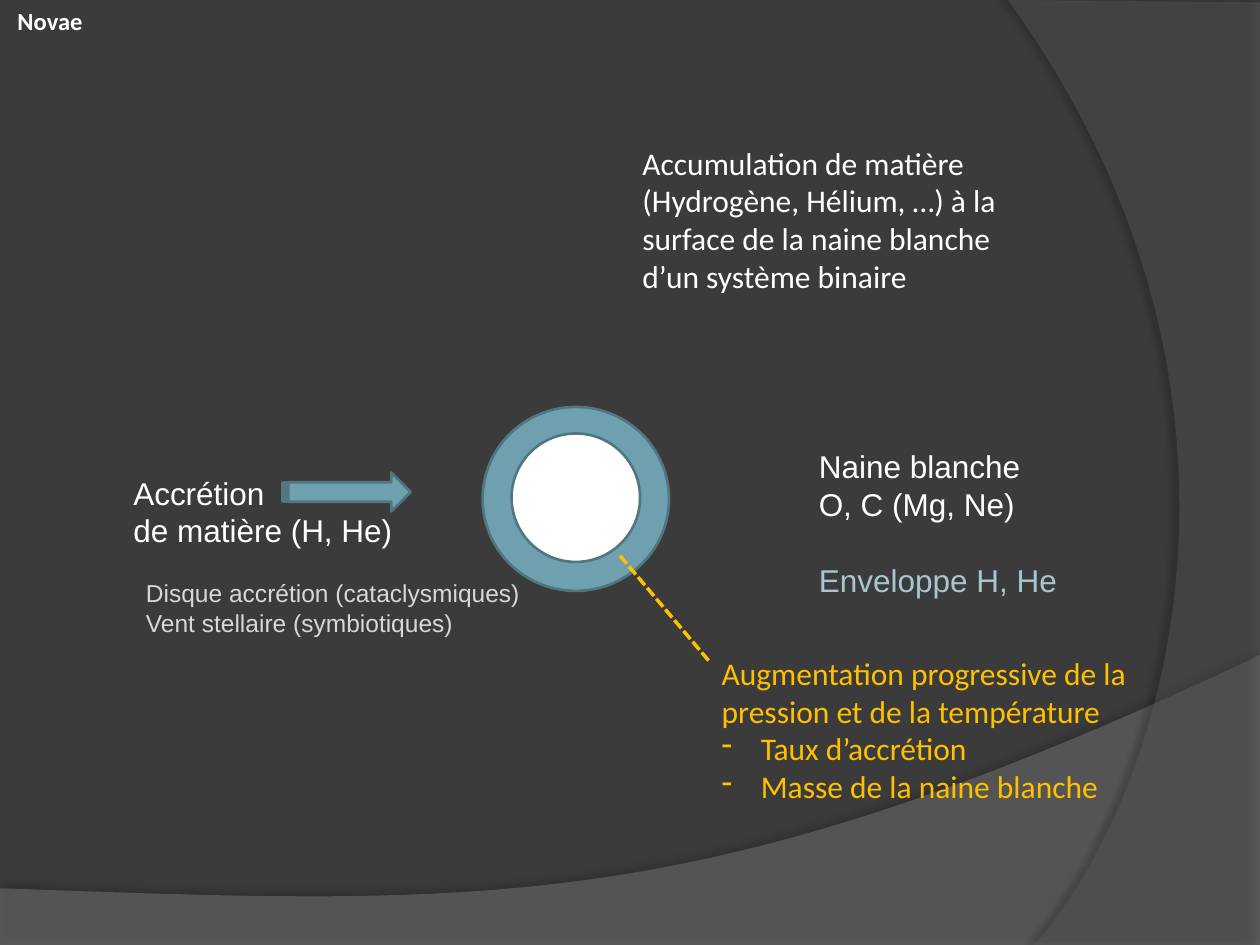
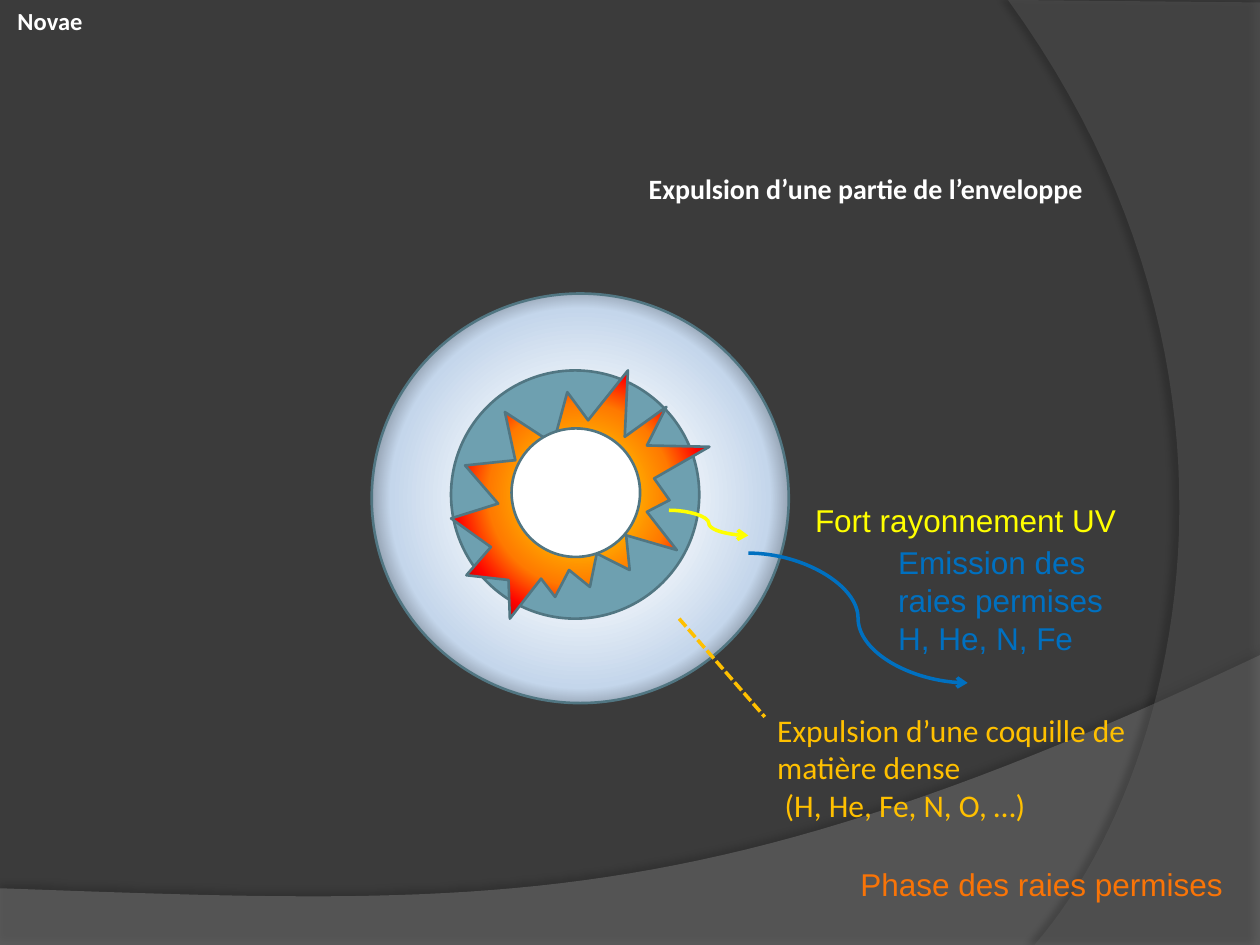
"""Build two slides that explain how novae erupt."""
import dataclasses

import pptx
import pptx.dml.color
import pptx.enum.dml
import pptx.enum.shapes
import pptx.enum.text
import pptx.oxml
import pptx.oxml.ns
import pptx.util

Inches = pptx.util.Inches
SHAPES = pptx.enum.shapes.MSO_SHAPE
CONNECTORS = pptx.enum.shapes.MSO_CONNECTOR


@dataclasses.dataclass(frozen=True)
class Theme:
    """Colours, fonts and sizes shared by the slides."""

    background: str = "3B3B3B"
    lower_band: str = "7F7F7F"
    side_band: str = "5E5E5E"
    shadow: str = "000000"
    white: str = "FFFFFF"
    muted: str = "D8D8D8"
    envelope: str = "6EA0B0"
    envelope_text: str = "A8C6D0"
    outline: str = "517682"
    amber: str = "FFC000"
    yellow: str = "FFFF00"
    blue: str = "0070C0"
    orange: str = "F97407"
    shell: tuple = ((3, "FFFFFF"), (23, "FFFFFF"), (65, "C4D6EB"), (92, "000000"), (100, "4C7C8B"))
    fire: tuple = ((0, "FFF200"), (51, "FF7A00"), (70, "FF0300"), (100, "4D0808"))
    sans: str = "Arial"
    humanist: str = "Calibri"
    body: int = 18
    heading: int = 16
    small: int = 14
    outline_width: float = 1.5
    pointer_width: float = 2


THEME = Theme()


def rgb(code):
    """Turn a hex code into a colour."""
    return pptx.dml.color.RGBColor.from_string(code)


def append_xml(parent, tag, inner="", **attributes):
    """Append one DrawingML element to a parent."""
    listed = "".join(f' {name}="{value}"' for name, value in attributes.items())
    namespace = pptx.oxml.ns.nsdecls("a")
    element = pptx.oxml.parse_xml(f"<a:{tag} {namespace}{listed}>{inner}</a:{tag}>")
    parent.append(element)
    return element


def colour_xml(code, opacity):
    """Describe a colour with an opacity in percent."""
    return f'<a:srgbClr val="{code}"><a:alpha val="{opacity * 1000}"/></a:srgbClr>'


def bezier(start, first, second, end, steps=48):
    """Sample a cubic curve, leaving out its start."""
    points = []
    for step in range(1, steps + 1):
        t = step / steps
        weights = ((1 - t) ** 3, 3 * t * (1 - t) ** 2, 3 * t * t * (1 - t), t ** 3)
        corners = (start, first, second, end)
        points.append(tuple(sum(w * c[axis] for w, c in zip(weights, corners)) for axis in (0, 1)))
    return points


def add_band(page, points, colour, opacity, shadow_opacity, distance, direction):
    """Draw a translucent background band with a soft shadow."""
    scaled = [(Inches(x), Inches(y)) for x, y in points]
    builder = page.shapes.build_freeform(*scaled[0], scale=1.0)
    builder.add_line_segments(scaled[1:], close=True)
    band = builder.convert_to_shape()
    band.fill.solid()
    band.fill.fore_color.rgb = rgb(colour)
    shade = band.fill._xPr.find(".//" + pptx.oxml.ns.qn("a:srgbClr"))
    append_xml(shade, "alpha", val=opacity * 1000)
    band.line.fill.background()
    band.shadow.inherit = False
    effects = band._element.spPr.find(pptx.oxml.ns.qn("a:effectLst"))
    append_xml(effects, "outerShdw", colour_xml(THEME.shadow, shadow_opacity),
               blurRad=pptx.util.Pt(4), dist=pptx.util.Pt(distance),
               dir=direction * 60000, algn="ctr", rotWithShape=0)


def fill_radially(shape, stops):
    """Fill a shape with a gradient spreading from its centre."""
    shape.fill.gradient()
    gradient = shape._element.spPr.find(pptx.oxml.ns.qn("a:gradFill"))
    for child in list(gradient):
        gradient.remove(child)
    stop_list = append_xml(gradient, "gsLst")
    for position, code in stops:
        append_xml(stop_list, "gs", f'<a:srgbClr val="{code}"/>', pos=position * 1000)
    centre = '<a:fillToRect l="50000" t="50000" r="50000" b="50000"/>'
    append_xml(gradient, "path", centre, path="circle")


def add_body(page, kind, bounds, fill):
    """Draw an outlined shape with a plain or radial fill."""
    shape = page.shapes.add_shape(kind, *map(Inches, bounds))
    if isinstance(fill, str):
        shape.fill.solid()
        shape.fill.fore_color.rgb = rgb(fill)
    else:
        fill_radially(shape, fill)
    shape.line.color.rgb = rgb(THEME.outline)
    shape.line.width = pptx.util.Pt(THEME.outline_width)
    shape.shadow.inherit = False


def indent(para, margin, first=0.0, bullet=None):
    """Set paragraph indents and an optional bullet."""
    properties = para._p.get_or_add_pPr()
    properties.set("marL", str(Inches(margin)))
    properties.set("indent", str(Inches(first)))
    if bullet:
        append_xml(properties, "buChar", char=bullet)


def add_text(page, bounds, lines, colour, font=THEME.sans, size=THEME.body, bold=False, wrap=True):
    """Place lines of text and return their paragraphs."""
    box = page.shapes.add_textbox(*map(Inches, bounds))
    frame = box.text_frame
    frame.word_wrap = wrap
    for index, line in enumerate(lines):
        para = frame.add_paragraph() if index else frame.paragraphs[0]
        span = para.add_run()
        span.text = line
        span.font.name = font
        span.font.size = pptx.util.Pt(size)
        span.font.bold = bold
        span.font.color.rgb = rgb(colour)
    return frame.paragraphs


def add_pointer(page, kind, start, end, colour):
    """Draw a coloured connector and return it."""
    pointer = page.shapes.add_connector(kind, *map(Inches, start + end))
    pointer.line.color.rgb = rgb(colour)
    pointer.line.width = pptx.util.Pt(THEME.pointer_width)
    append_xml(pointer._element.spPr, "effectLst")
    return pointer


def add_dashed_pointer(page, start, end):
    """Draw a dashed line leading to a remark."""
    pointer = add_pointer(page, CONNECTORS.STRAIGHT, start, end, THEME.amber)
    pointer.line.dash_style = pptx.enum.dml.MSO_LINE.SQUARE_DOT


def add_ray(page, start, end, colour):
    """Draw a curved arrow for emitted radiation."""
    ray = add_pointer(page, CONNECTORS.CURVE, start, end, colour)
    append_xml(ray.line._get_or_add_ln(), "tailEnd", type="arrow")


def add_page(deck):
    """Add a slide with the shared backdrop and title."""
    page = deck.slides.add_slide(deck.slide_layouts[6])
    page.background.fill.solid()
    page.background.fill.fore_color.rgb = rgb(THEME.background)
    lower = [(0, 7.05), (0, 7.5), (10, 7.5), (10, 5.2)]
    lower += bezier((10, 5.2), (5.59, 7.29), (3.91, 7.19), (0, 7.05))
    add_band(page, lower, THEME.lower_band, 45, 35, 3.5, 270)
    side = [(10, 0.02), (10, 7.5), (8.21, 7.5)]
    side += bezier((8.21, 7.5), (9.35, 6.19), (10.18, 3), (8, 0))
    add_band(page, side, THEME.side_band, 40, 45, 4, 180)
    title = add_text(page, (0, 0, 0.91, 0.25), ["Novae"], THEME.white,
                     THEME.humanist, THEME.small, bold=True)
    indent(title[0], 0.04)
    return page


def add_accretion_page(deck):
    """Show matter building up on the white dwarf."""
    page = add_page(deck)
    add_body(page, SHAPES.OVAL, (3.83, 3.23, 1.48, 1.46), THEME.envelope)
    add_body(page, SHAPES.OVAL, (4.06, 3.44, 1.02, 1.02), THEME.white)
    add_text(page, (6.4, 3.5, 1.81, 0.71), ["Naine blanche", "O, C (Mg, Ne)"],
             THEME.white, wrap=False)
    add_body(page, SHAPES.STRIPED_RIGHT_ARROW, (2.24, 3.75, 1.02, 0.31), THEME.envelope)
    add_text(page, (0.96, 3.71, 2.54, 0.71), ["Accrétion", "de matière (H, He)"], THEME.white)
    add_text(page, (1.06, 4.54, 3.18, 0.57),
             ["Disque accrétion (cataclysmiques)", "Vent stellaire (symbiotiques)"],
             THEME.muted, size=THEME.small, wrap=False)
    add_text(page, (6.4, 4.4, 2.11, 0.4), ["Enveloppe H, He"], THEME.envelope_text, wrap=False)
    add_text(page, (5, 1.09, 3.31, 1.31),
             ["Accumulation de matière (Hydrogène, Hélium, …) à la surface "
              "de la naine blanche d’un système binaire"], THEME.white, THEME.humanist)
    remark = add_text(page, (5.63, 5.14, 3.7, 1.31),
                      ["Augmentation progressive de la pression et de la température",
                       "Taux d’accrétion", "Masse de la naine blanche"],
                      THEME.amber, THEME.humanist)
    for para in remark[1:]:
        indent(para, 0.31, -0.31, "-")
    add_dashed_pointer(page, (4.92, 4.41), (5.63, 5.25))


def add_expulsion_page(deck):
    """Show the envelope being expelled and its radiation."""
    page = add_page(deck)
    add_body(page, SHAPES.OVAL, (2.95, 2.33, 3.31, 3.25), THEME.shell)
    add_body(page, SHAPES.OVAL, (3.58, 2.94, 1.97, 1.97), THEME.envelope)
    add_body(page, SHAPES.EXPLOSION2, (3.58, 2.94, 2.05, 1.97), THEME.fire)
    add_body(page, SHAPES.OVAL, (4.06, 3.4, 1.02, 1.02), THEME.white)
    add_text(page, (5.05, 1.31, 3.69, 0.37), ["Expulsion d’une partie de l’enveloppe"],
             THEME.white, THEME.humanist, THEME.heading, bold=True, wrap=False)
    remark = add_text(page, (6.07, 5.59, 3.56, 1.01),
                      ["Expulsion d’une coquille de matière dense", "(H, He, Fe, N, O, …)"],
                      THEME.amber, THEME.humanist)
    indent(remark[1], 0.06)
    add_dashed_pointer(page, (5.39, 4.91), (6.07, 5.69))
    add_ray(page, (5.31, 4.05), (5.94, 4.25), THEME.yellow)
    add_text(page, (6.37, 3.93, 2.61, 0.4), ["Fort rayonnement UV"], THEME.yellow, wrap=False)
    add_ray(page, (5.94, 4.39), (7.68, 5.42), THEME.blue)
    add_text(page, (7.03, 4.26, 1.96, 1.01), ["Emission des raies permises H, He, N, Fe"],
             THEME.blue)
    add_text(page, (6.73, 6.82, 3.11, 0.4), ["Phase des raies permises"],
             THEME.orange, wrap=False)


def main():
    """Build and save the deck."""
    deck = pptx.Presentation()
    deck.slide_width = Inches(10)
    deck.slide_height = Inches(7.5)
    add_accretion_page(deck)
    add_expulsion_page(deck)
    deck.save("out.pptx")


if __name__ == "__main__":
    main()
